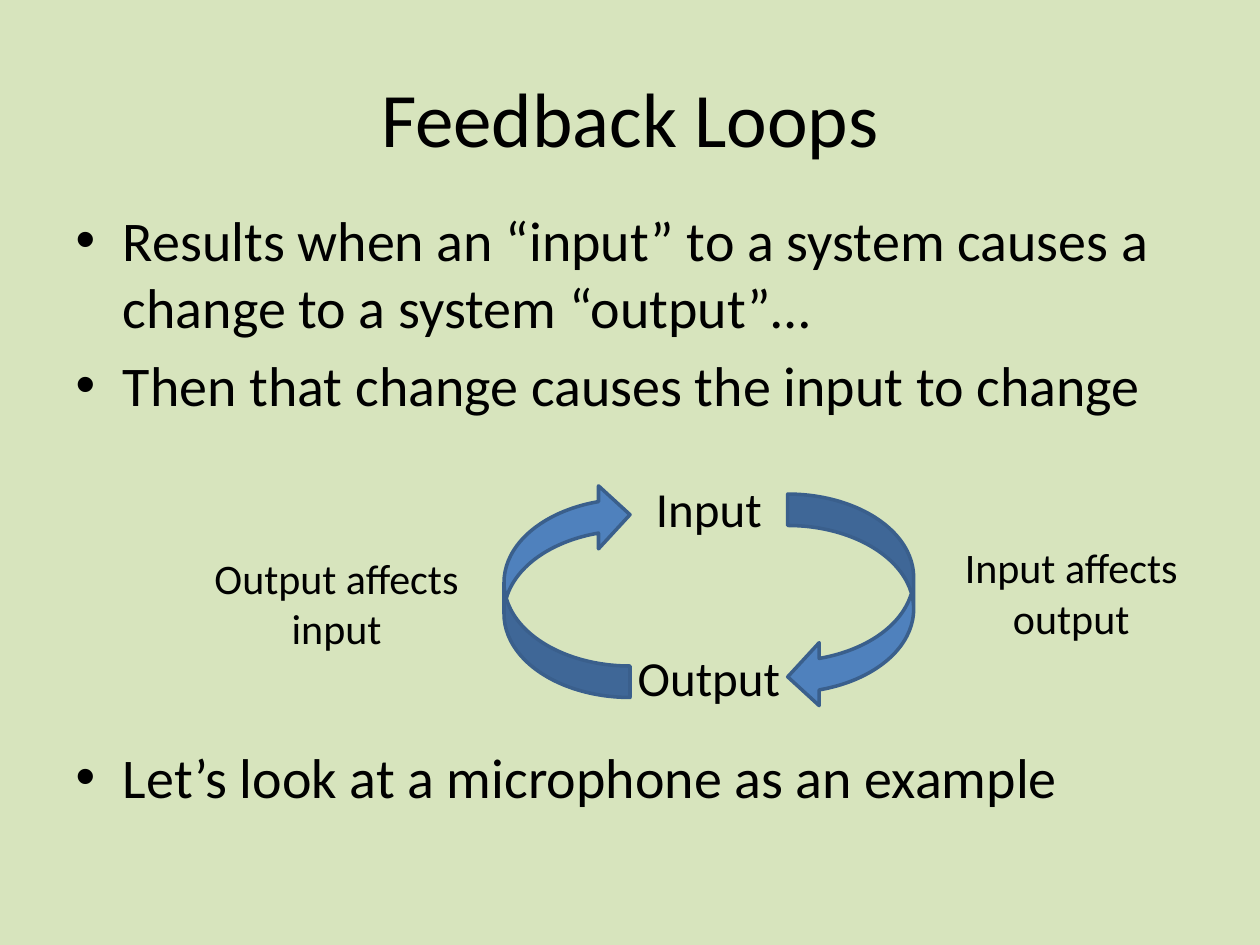
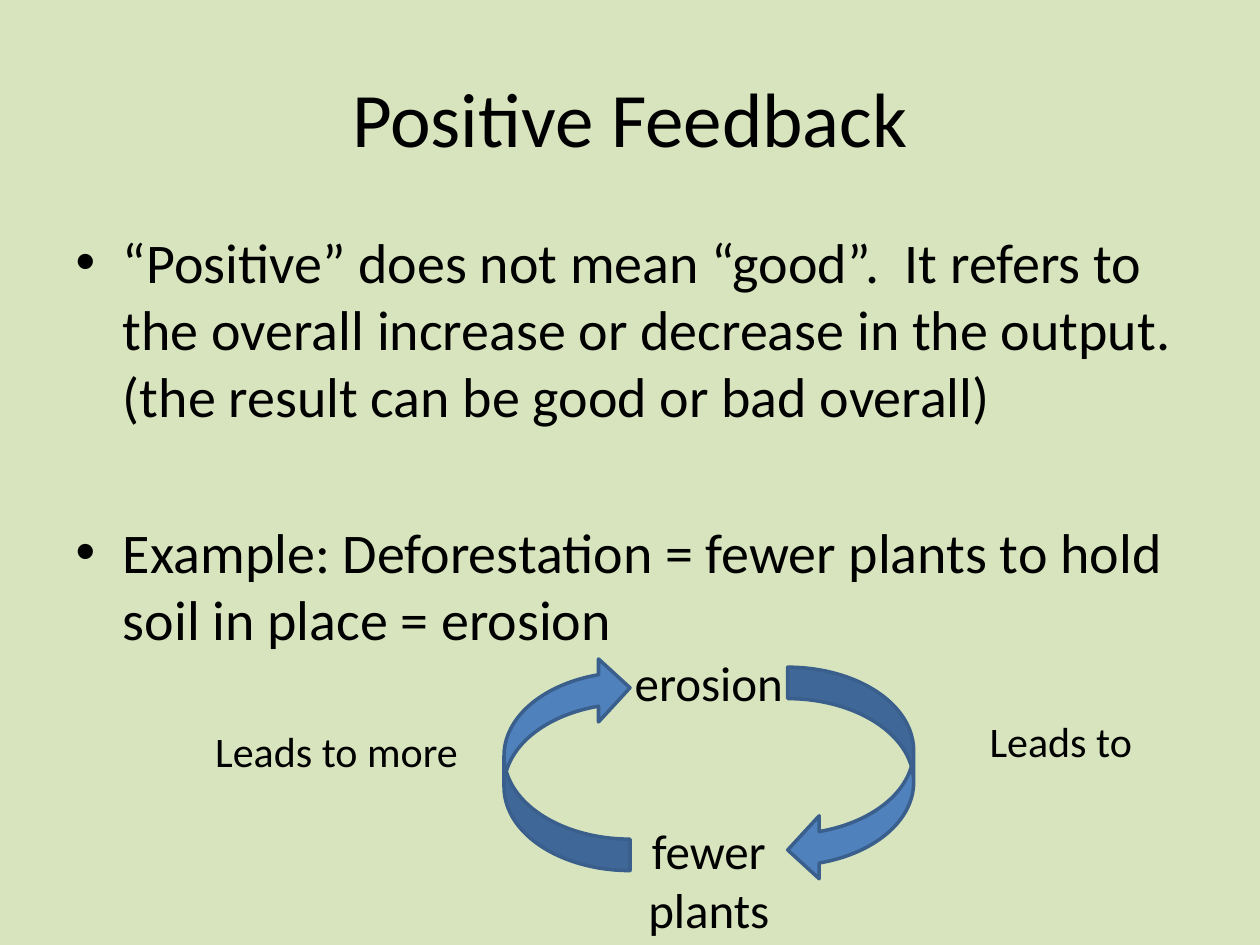
from pptx import Presentation
from pptx.dml.color import RGBColor
from pptx.enum.shapes import MSO_SHAPE
from pptx.enum.text import MSO_ANCHOR, MSO_AUTO_SIZE, PP_ALIGN
from pptx.util import Cm, Pt

COLOURS = {"background": "D7E4BD", "text": "000000",
           "arrow": "4F81BD", "arrow_edge": "3A5F8C"}
FONT = "Calibri"
CYCLE_CENTRE = 14.29
SIDE_WIDTH = 6.35


def colour(name):
    return RGBColor.from_string(COLOURS[name])


class Deck:
    """Holds the shared style and the slide being built."""

    def __init__(self):
        self.presentation = Presentation()
        self.presentation.slide_width = Cm(25.4)
        self.presentation.slide_height = Cm(19.05)
        self.slide = None

    def new_slide(self, heading):
        layout = self.presentation.slide_layouts[1]
        self.slide = self.presentation.slides.add_slide(layout)
        fill = self.slide.background.fill
        fill.solid()
        fill.fore_color.rgb = colour("background")
        title = self.slide.shapes.title
        self.place(title, 1.27, 0.76, 22.86, 3.18)
        title.text_frame.text = heading
        title.text_frame.vertical_anchor = MSO_ANCHOR.MIDDLE
        self.format_text(title.text_frame, 44, PP_ALIGN.CENTER)

    def place(self, shape, left, top, width, height):
        shape.left, shape.top = Cm(left), Cm(top)
        shape.width, shape.height = Cm(width), Cm(height)

    def format_text(self, frame, size, alignment):
        for paragraph in frame.paragraphs:
            paragraph.alignment = alignment
            for run in paragraph.runs:
                run.font.name = FONT
                run.font.size = Pt(size)
                run.font.color.rgb = colour("text")

    def bullets(self, top, height, points, last_gap):
        """Fill the body; last_gap sets the last point apart, in points."""
        body = self.slide.placeholders[1]
        self.place(body, 1.27, top, 22.86, height)
        frame = body.text_frame
        frame.text = "\n".join(points)
        frame.auto_size = MSO_AUTO_SIZE.NONE
        self.format_text(frame, 32, PP_ALIGN.LEFT)
        frame.paragraphs[-1].space_before = Pt(last_gap)

    def arrow(self, left, top, rotation=0):
        arrow = self.slide.shapes.add_shape(
            MSO_SHAPE.CURVED_LEFT_ARROW, Cm(left), Cm(top), Cm(2.54), Cm(4.32))
        arrow.rotation = rotation
        arrow.shadow.inherit = False
        arrow.fill.solid()
        arrow.fill.fore_color.rgb = colour("arrow")
        arrow.line.color.rgb = colour("arrow_edge")
        arrow.line.width = Pt(2)

    def label(self, text, left, top, width, size, lines=1):
        height = 0.25 + lines * size * 0.0423
        label = self.slide.shapes.add_textbox(
            Cm(left), Cm(top), Cm(width), Cm(height))
        frame = label.text_frame
        frame.word_wrap = True
        frame.auto_size = MSO_AUTO_SIZE.SHAPE_TO_FIT_TEXT
        frame.text = text
        self.format_text(frame, size, PP_ALIGN.CENTER)

    def cycle(self, top, stages, effects, effect_left, effect_lines):
        """Draw two stages joined by arrows; stages are (text, width, lines)."""
        self.arrow(15.88, top + 0.43)
        self.arrow(10.16, top + 0.21, rotation=180)
        for row, (text, width, lines) in enumerate(stages):
            self.label(text, CYCLE_CENTRE - width / 2, top + row * 3.39,
                       width, 28, lines)
        forward, back = effects
        self.label(forward, effect_left, top + 1.27, SIDE_WIDTH, 24, effect_lines)
        self.label(back, 3.61, top + 1.48, SIDE_WIDTH, 24, effect_lines)


def main():
    deck = Deck()

    # Feedback loops in general
    deck.new_slide("Feedback Loops")
    deck.bullets(4.01, 14.17, [
        "Results when an “input” to a system causes a change to a system “output”…",
        "Then that change causes the input to change",
        "Let’s look at a microphone as an example",
    ], last_gap=185.6)
    deck.cycle(9.53, [("Input", 3.18, 1), ("Output", 4.01, 1)],
               ("Input affects output", "Output affects input"),
               effect_left=18.42, effect_lines=2)

    # Positive feedback, with erosion as the example
    deck.new_slide("Positive Feedback")
    deck.bullets(4.45, 12.57, [
        "“Positive” does not mean “good”.  It refers to the overall increase or "
        "decrease in the output. (the result can be good or bad overall)",
        "Example: Deforestation = fewer plants to hold soil in place = erosion",
    ], last_gap=50.8)
    deck.cycle(13.02, [("erosion", 3.61, 1), ("fewer plants", 4.01, 2)],
               ("Leads to", "Leads to more"),
               effect_left=18.21, effect_lines=1)

    deck.presentation.save("out.pptx")


if __name__ == "__main__":
    main()
